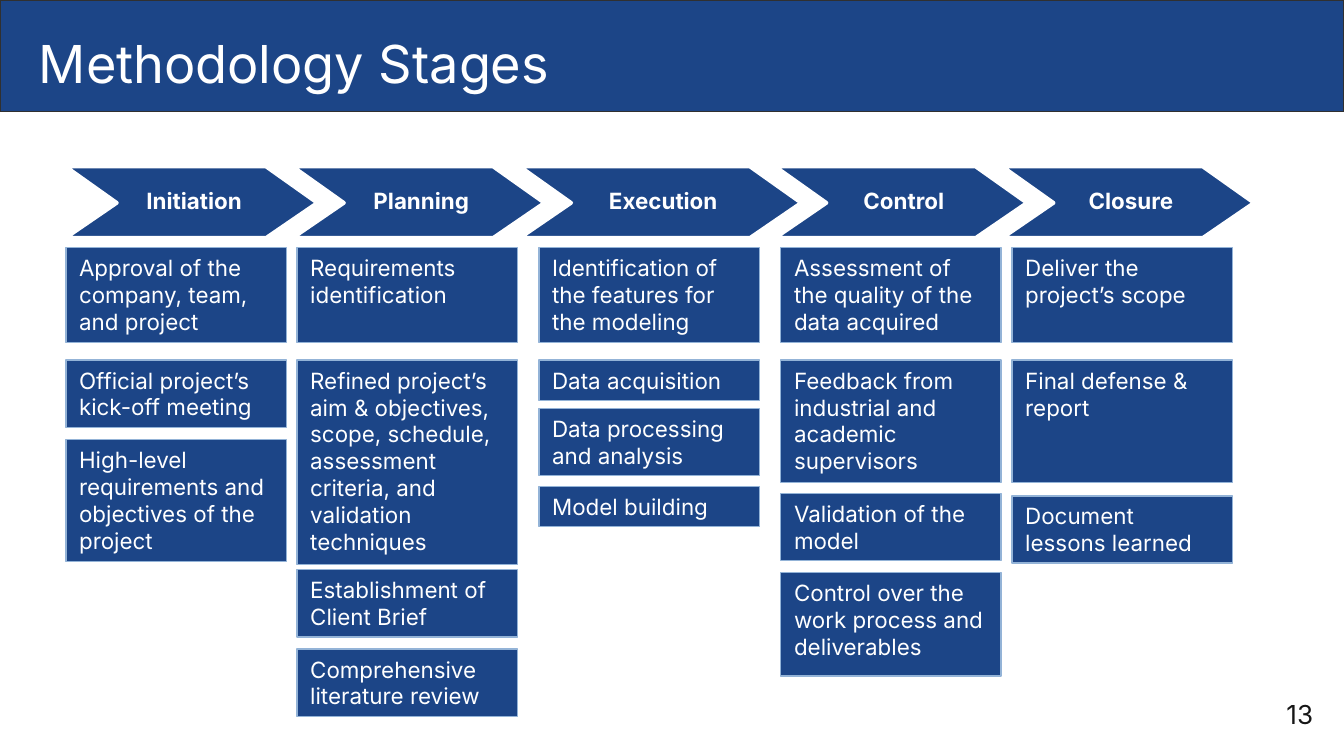
from pptx import Presentation
from pptx.dml.color import RGBColor
from pptx.enum.shapes import MSO_SHAPE as Form
from pptx.enum.text import MSO_ANCHOR as Anchor, MSO_AUTO_SIZE as Auto, PP_ALIGN as Align
from pptx.util import Inches, Pt

HEX = {"blue": "1C4587", "white": "FFFFFF", "edge": "93B3D7", "dark": "303030", "ink": "161616"}
TINT = {name: RGBColor.from_string(code) for name, code in HEX.items()}


def paint(shape, fill, line, width):
    shape.shadow.inherit = False
    shape.fill.solid()
    shape.fill.fore_color.rgb = TINT[fill]
    shape.line.color.rgb = TINT[line]
    shape.line.width = Pt(width)


def write(shape, text, size, pads, tint="white", align=Align.LEFT, anchor=Anchor.TOP, bold=False, space=1.0):
    frame = shape.text_frame
    frame.text = text
    sides = ("margin_left", "margin_top", "margin_right", "margin_bottom")
    form = dict(zip(sides, map(Inches, pads)))
    form |= {"word_wrap": True, "auto_size": Auto.NONE, "vertical_anchor": anchor}
    para = frame.paragraphs[0]
    font = para.runs[0].font
    jobs = [
        (frame, form),
        (para, {"alignment": align, "line_spacing": space}),
        (font, {"name": "Inter", "size": Pt(size), "bold": bold}),
    ]
    for item, values in jobs:
        for key, value in values.items():
            setattr(item, key, value)
    font.color.rgb = TINT[tint]


# A 16:9 page
deck = Presentation()
deck.slide_width = Inches(10)
deck.slide_height = Inches(10) * 9 // 16
slide = deck.slides.add_slide(deck.slide_layouts[5])
shapes = slide.shapes
slide.background.fill.solid()
slide.background.fill.fore_color.rgb = TINT["blue"]

# White page and header band
for top, high, fill, line, width in [(0.83, 4.8, "white", "white", 2), (0, 0.83, "blue", "dark", 0.75)]:
    band = shapes.add_shape(Form.RECTANGLE, 0, Inches(top), Inches(10), Inches(high))
    paint(band, fill, line, width)

# Title, brought in front of the band
title = shapes.title
title.left, title.top, title.width, title.height = map(Inches, (0.19, 0.13, 9.32, 0.63))
write(title, "Methodology Stages", 28, [0.1] * 4)
shapes.element.append(title.element)

# Stages: name, arrow left, arrow width, box left, boxes (top, height, text)
STAGES = [
    ("Initiation", 0.49, 1.87, 0.49, [
        (1.84, 0.71, "Approval of the company, team, and project"),
        (2.68, 0.5, "Official project’s kick-off meeting"),
        (3.27, 0.91, "High-level requirements and objectives of the project"),
    ]),
    ("Planning", 2.18, 1.87, 2.21, [
        (1.84, 0.71, "Requirements identification"),
        (2.68, 1.52, "Refined project’s aim & objectives, scope, schedule, "
                     "assessment criteria, and validation techniques"),
        (4.24, 0.5, "Establishment of Client Brief"),
        (4.83, 0.5, "Comprehensive literature review"),
    ]),
    ("Execution", 3.87, 2.09, 4.01, [
        (1.84, 0.71, "Identification of the features for the modeling"),
        (2.68, 0.3, "Data acquisition"),
        (3.04, 0.5, "Data processing and analysis"),
        (3.62, 0.3, "Model building"),
    ]),
    ("Control", 5.77, 1.87, 5.81, [
        (1.84, 0.71, "Assessment of the quality of the data acquired"),
        (2.68, 0.91, "Feedback from industrial and academic supervisors"),
        (3.67, 0.5, "Validation of the model"),
        (4.26, 0.77, "Control over the work process and deliverables"),
    ]),
    ("Closure", 7.46, 1.87, 7.53, [
        (1.84, 0.71, "Deliver the project’s scope"),
        (2.68, 0.91, "Final defense & report"),
        (3.69, 0.5, "Document lessons learned"),
    ]),
]
TOP, MID, LOW, TIP = 1.24, 1.51, 1.77, 0.38

for name, left, wide, edge, boxes in STAGES:
    # Stage arrow
    end = left + wide
    points = [(end - TIP, TOP), (end, MID), (end - TIP, LOW), (left, LOW), (left + TIP, MID)]
    path = shapes.build_freeform(Inches(left), Inches(TOP))
    path.add_line_segments([(Inches(x), Inches(y)) for x, y in points], close=True)
    arrow = path.convert_to_shape()
    paint(arrow, "blue", "white", 2)
    write(arrow, name, 12, (0.43, 0.02, 0.39, 0.02), align=Align.CENTER,
          anchor=Anchor.MIDDLE, bold=True, space=0.9)

    # Boxes below the arrow
    for top, high, text in boxes:
        box = shapes.add_shape(Form.RECTANGLE, *map(Inches, (edge, top, 1.64, high)))
        paint(box, "blue", "edge", 0.75)
        write(box, text, 12, (0.1, 0.05, 0.1, 0.05))

# Page number
page = shapes.add_textbox(*map(Inches, (9.27, 5.1, 0.6, 0.43)))
write(page, "13", 14, [0.1] * 4, "ink", Align.RIGHT, Anchor.MIDDLE)

deck.save("out.pptx")
